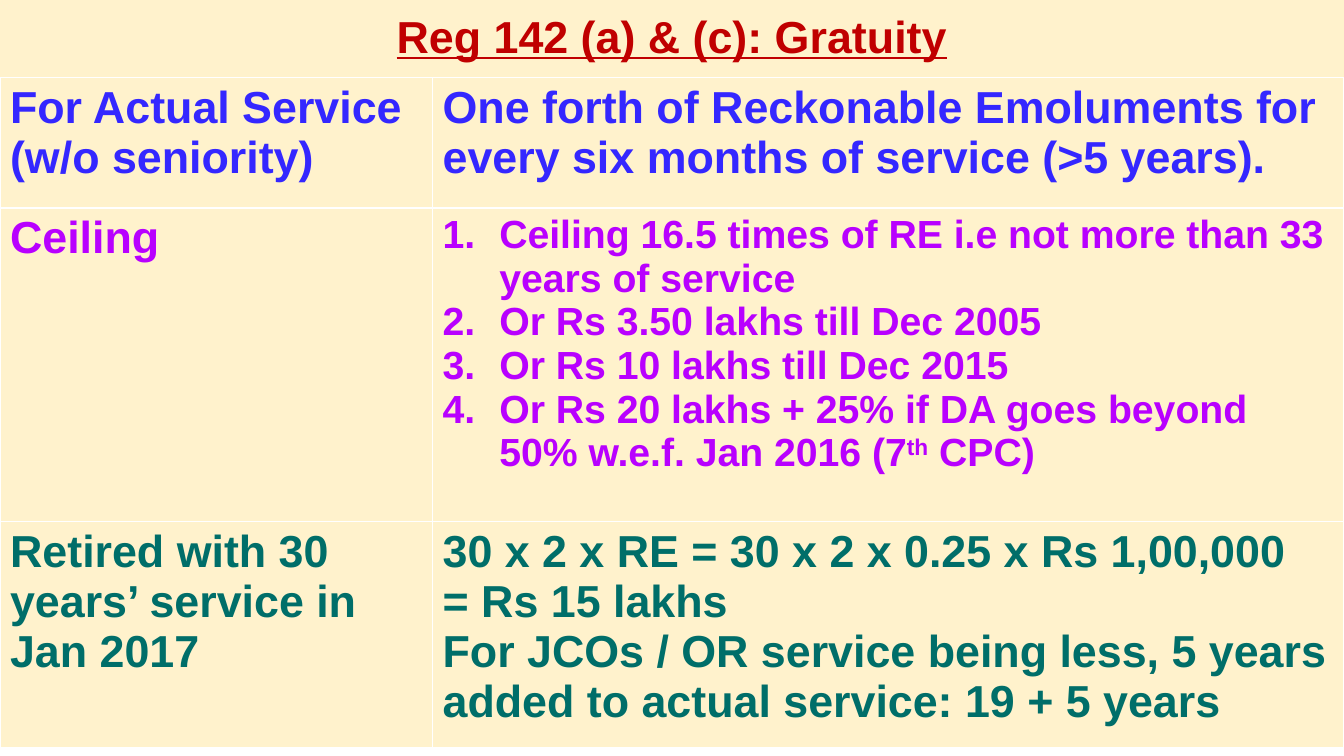
from lxml.etree import SubElement
from pptx import Presentation
from pptx.dml.color import RGBColor
from pptx.enum.text import MSO_ANCHOR, PP_ALIGN
from pptx.oxml.ns import qn
from pptx.util import Cm, Pt

CREAM = RGBColor(0xFF, 0xF2, 0xCC)
RED = RGBColor(0xC0, 0x00, 0x00)
BLUE = RGBColor(0x34, 0x27, 0xFF)
PURPLE = RGBColor(0xB8, 0x00, 0xFF)
TEAL = RGBColor(0x00, 0x6E, 0x69)

TITLE_HEIGHT = Cm(1.96)
LABEL_WIDTH = Cm(10.9)
NUMBER_INDENT = Cm(1.43)

# Row height, colour, label, detail size, numbered, detail paragraphs; ^ encloses superscript
ROWS = [
    (Cm(3.28), BLUE, "For Actual Service (w/o seniority)", 32, False, [
        "One forth of Reckonable Emoluments for every six months of service (>5 years).",
    ]),
    (Cm(7.9), PURPLE, "Ceiling", 28, True, [
        "Ceiling 16.5 times of RE i.e not more than 33 years of service",
        "Or Rs 3.50 lakhs till Dec 2005",
        "Or Rs 10 lakhs till Dec 2015",
        "Or Rs 20 lakhs + 25% if DA goes beyond 50% w.e.f. Jan 2016 (7^th^ CPC)",
    ]),
    (Cm(5.69), TEAL, "Retired with 30 years’ service in Jan 2017", 32, False, [
        "30 x 2 x RE = 30 x 2 x 0.25 x Rs 1,00,000",
        "= Rs 15 lakhs",
        "For JCOs / OR service being less, 5 years added to actual service: 19 + 5 years",
    ]),
]


def write_paragraph(paragraph, text, size, color, underline=False):
    """Add bold runs, raising the parts between ^ marks."""
    for index, part in enumerate(text.split("^")):
        run = paragraph.add_run()
        run.text = part
        font_format = {"name": "Arial", "size": Pt(size), "bold": True, "underline": underline}
        for name, value in font_format.items():
            setattr(run.font, name, value)
        run.font.color.rgb = color
        if index % 2:
            run._r.get_or_add_rPr().set("baseline", "30000")


def number_paragraph(paragraph):
    properties = paragraph._p.get_or_add_pPr()
    properties.set("marL", str(NUMBER_INDENT))
    properties.set("indent", str(-NUMBER_INDENT))
    SubElement(properties, qn("a:buFont"), typeface="+mj-lt")
    SubElement(properties, qn("a:buAutoNum"), type="arabicPeriod")


presentation = Presentation()
presentation.slide_width = Cm(33.87)
presentation.slide_height = Cm(19.05)
slide = presentation.slides.add_slide(presentation.slide_layouts[6])

# Title band
title = slide.shapes.add_textbox(0, 0, presentation.slide_width, TITLE_HEIGHT)
title.fill.solid()
title.fill.fore_color.rgb = CREAM
title.text_frame.word_wrap = True
title.text_frame.vertical_anchor = MSO_ANCHOR.MIDDLE
heading = title.text_frame.paragraphs[0]
heading.alignment = PP_ALIGN.CENTER
heading.line_spacing = 0.9
write_paragraph(heading, "Reg 142 (a) & (c): Gratuity", 32, RED, underline=True)

# Gratuity table
table_height = sum(row[0] for row in ROWS)
table = slide.shapes.add_table(
    len(ROWS), 2, 0, TITLE_HEIGHT, presentation.slide_width, table_height).table
table.horz_banding = False
table.columns[0].width = LABEL_WIDTH
table.columns[1].width = presentation.slide_width - LABEL_WIDTH

for row_index, (height, color, label, detail_size, numbered, details) in enumerate(ROWS):
    table.rows[row_index].height = height
    label_cell, detail_cell = table.rows[row_index].cells
    for cell in (label_cell, detail_cell):
        cell.fill.solid()
        cell.fill.fore_color.rgb = CREAM
    write_paragraph(label_cell.text_frame.paragraphs[0], label, 32, color)
    for index, text in enumerate(details):
        frame = detail_cell.text_frame
        paragraph = frame.add_paragraph() if index else frame.paragraphs[0]
        write_paragraph(paragraph, text, detail_size, color)
        if numbered:
            number_paragraph(paragraph)

presentation.save("out.pptx")
